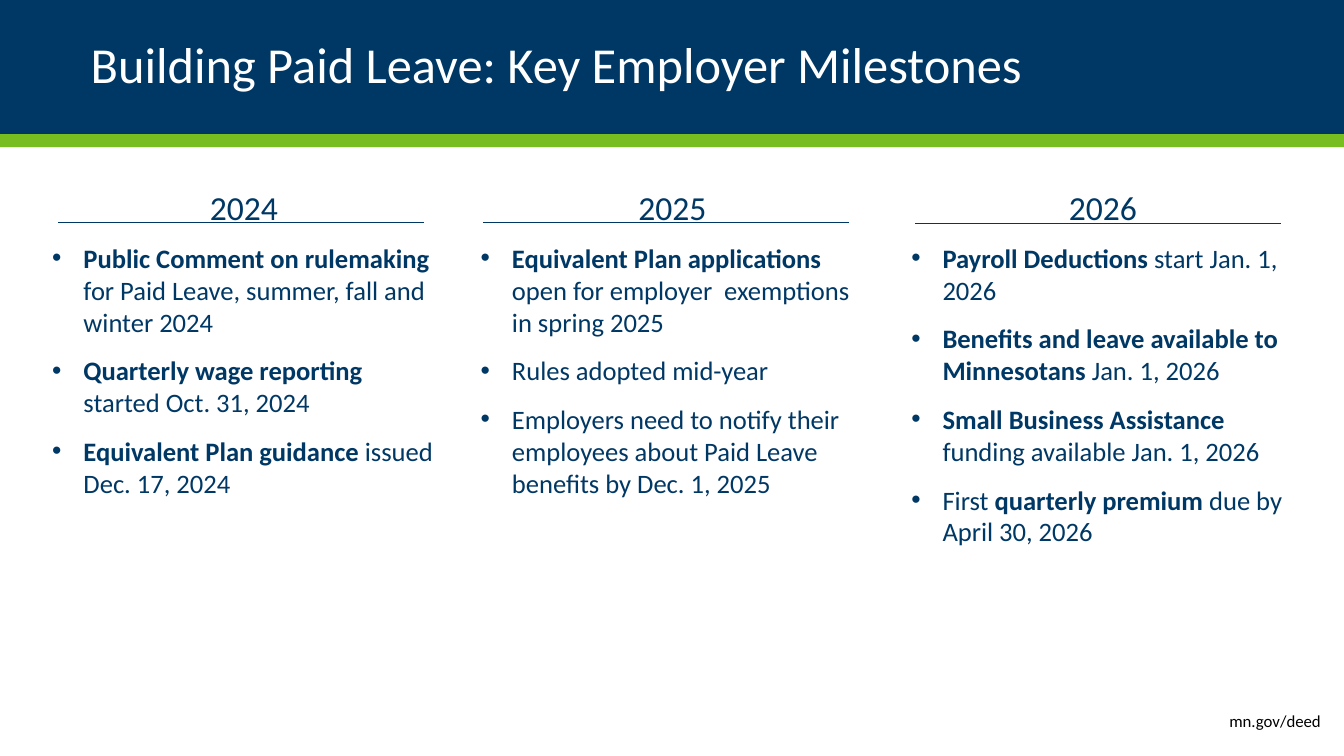
"""Build the slide of key employer milestones for paid leave."""
from collections import namedtuple

from lxml.etree import SubElement
from pptx import Presentation
from pptx.dml.color import RGBColor as RGB
from pptx.enum.shapes import MSO_CONNECTOR as LINE, MSO_SHAPE as SHAPE
from pptx.enum.text import MSO_ANCHOR as ANCHOR, PP_ALIGN as ALIGN
from pptx.oxml.ns import qn
from pptx.util import Inches, Pt

Theme = namedtuple("Theme", "navy green white black font title head body foot")
theme = Theme(
    navy=RGB.from_string("003865"),
    green=RGB.from_string("78BE21"),
    white=RGB.from_string("FFFFFF"),
    black=RGB.from_string("000000"),
    font="Calibri",
    title=Pt(36),
    head=Pt(24),
    body=Pt(19),
    foot=Pt(12),
)

Column = namedtuple("Column", "year left rule level items")
columns = [
    Column("2024", 0.42, 0.58, 2.21, [
        [("Public Comment on rulemaking", True),
         (" for Paid Leave, summer, fall and winter 2024", False)],
        [("Quarterly wage reporting ", True), ("started Oct. 31, 2024", False)],
        [("Equivalent Plan guidance", True), (" issued Dec. 17, 2024", False)],
    ]),
    Column("2025", 4.67, 4.79, 2.21, [
        [("Equivalent Plan applications", True),
         (" open for employer  exemptions in spring 2025", False)],
        [("Rules adopted mid-year", False)],
        [("Employers need to notify their employees about Paid Leave "
          "benefits by Dec. 1, 2025", False)],
    ]),
    Column("2026", 8.94, 9.08, 2.22, [
        [("Payroll Deductions ", True), ("start Jan. 1, 2026", False)],
        [("Benefits and leave available to Minnesotans", True),
         (" Jan. 1, 2026", False)],
        [("Small Business Assistance", True),
         (" funding available Jan. 1, 2026", False)],
        [("First ", False), ("quarterly premium ", True),
         ("due by April 30, 2026", False)],
    ]),
]


def style(para, size, color, align=ALIGN.LEFT):
    """Format every run of a paragraph and align it."""
    para.alignment = align
    for run in para.runs:
        run.font.name = theme.font
        run.font.size = size
        run.font.color.rgb = color


def band(top, height, color):
    """Add a plain band across the full width of the slide."""
    shape = slide.shapes.add_shape(
        SHAPE.RECTANGLE, 0, Inches(top), deck.slide_width, Inches(height))
    shape.shadow.inherit = False
    shape.fill.solid()
    shape.fill.fore_color.rgb = color
    shape.line.fill.background()
    return shape


deck = Presentation()
deck.slide_width = Inches(13.33)
deck.slide_height = Inches(7.5)
slide = deck.slides.add_slide(deck.slide_layouts[6])

band(1.33, 0.13, theme.green)
frame = band(0, 1.33, theme.navy).text_frame
frame.margin_left = frame.margin_right = Inches(0.9)
frame.vertical_anchor = ANCHOR.MIDDLE
frame.text = "Building Paid Leave: Key Employer Milestones"
title = frame.paragraphs[0]
title.line_spacing = 0.9
style(title, theme.title, theme.white)

for col in columns:
    box = slide.shapes.add_textbox(
        Inches(col.left), Inches(1.81), Inches(4), Inches(5))
    frame = box.text_frame
    frame.word_wrap = True
    frame.text = col.year
    head = frame.paragraphs[0]
    head.space_after = Pt(10)
    style(head, theme.head, theme.navy, ALIGN.CENTER)

    for item in col.items:
        para = frame.add_paragraph()
        for text, bold in item:
            run = para.add_run()
            run.text = text
            run.font.bold = bold
        style(para, theme.body, theme.navy)
        if item is not col.items[-1]:
            para.space_after = Pt(12)
        props = para._p.get_or_add_pPr()
        props.set("marL", str(Inches(0.31)))
        props.set("indent", str(-Inches(0.31)))
        SubElement(props, qn("a:buFont")).set("typeface", "Arial")
        SubElement(props, qn("a:buChar")).set("char", "•")

frame = slide.shapes.add_textbox(
    Inches(3.61), Inches(6.95), Inches(9.59), Inches(0.4)).text_frame
frame.word_wrap = True
frame.vertical_anchor = ANCHOR.MIDDLE
frame.text = "mn.gov/deed"
style(frame.paragraphs[0], theme.foot, theme.black, ALIGN.RIGHT)

for col in columns:
    rule = slide.shapes.add_connector(
        LINE.STRAIGHT, Inches(col.rule), Inches(col.level),
        Inches(col.rule + 3.63), Inches(col.level))
    rule.line.color.rgb = theme.navy
    rule.line.width = Pt(0.75)
    SubElement(rule._element.spPr, qn("a:effectLst"))

deck.save("out.pptx")
